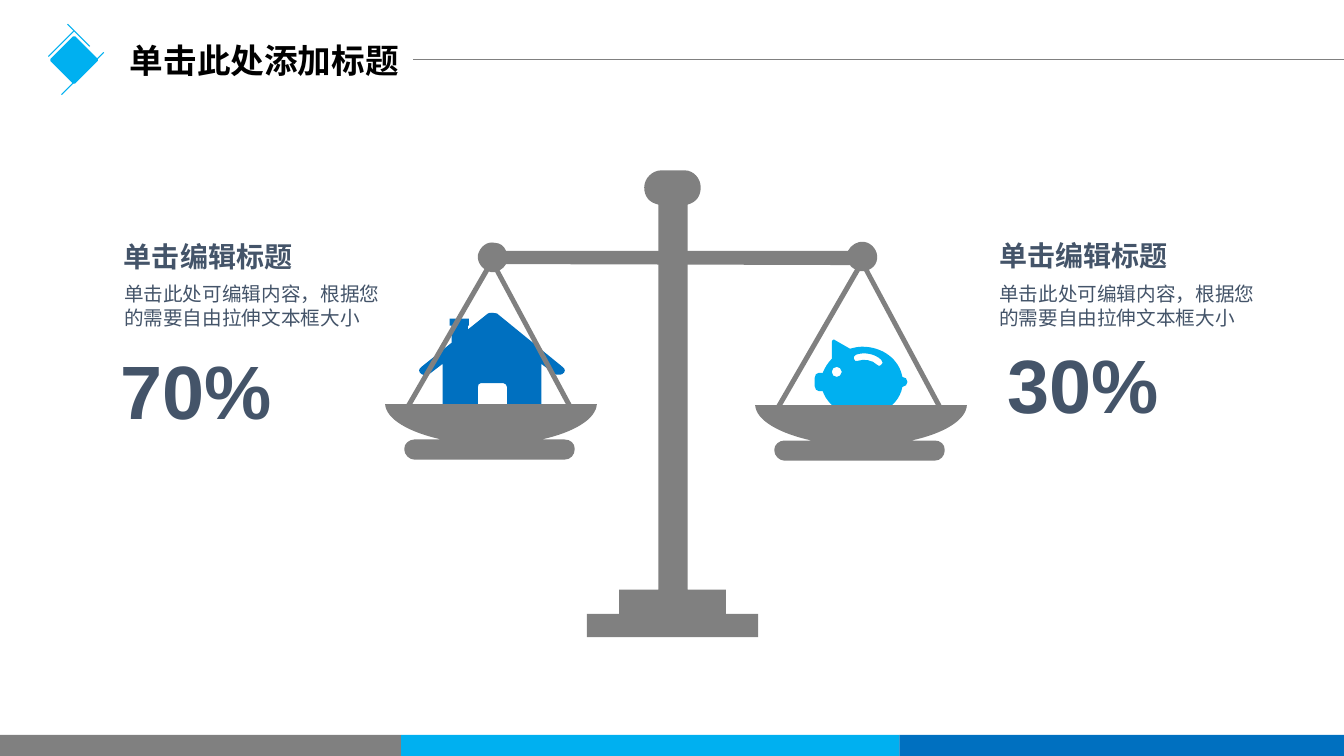
import math
from dataclasses import dataclass

from lxml import etree
from pptx import Presentation
from pptx import util as u
from pptx.dml.color import RGBColor
from pptx.enum import shapes, text
from pptx.oxml.ns import qn


@dataclass(frozen=True)
class Theme:
    gray: str = "808080"
    sky: str = "00B0F0"
    blue: str = "0070C0"
    slate: str = "445469"
    black: str = "000000"
    latin: str = "Arial"
    chinese: str = "Noto Sans CJK SC"
    title: int = 24
    heading: int = 20
    body: int = 14
    figure: int = 54
    hairline: float = 0.75


def turn(point, center, degrees):
    """Turn a point clockwise about a center."""
    angle = math.radians(degrees)
    dx, dy = point[0] - center[0], point[1] - center[1]
    return (center[0] + dx * math.cos(angle) - dy * math.sin(angle),
            center[1] + dx * math.sin(angle) + dy * math.cos(angle))


def curve_segments(shape, contours):
    """Join each run of three line segments that stands for a curve into one."""
    path = next(shape._element.iter(qn("a:path")))
    segments = iter(path.findall(qn("a:lnTo")))
    for contour in contours:
        for node in contour[1:]:
            first = next(segments)
            if len(node) == 6:
                first.tag = qn("a:cubicBezTo")
                for _ in range(2):
                    following = next(segments)
                    first.append(following[0])
                    path.remove(following)


def write(frame, content, *, size, color, font, bold=False):
    paragraph = frame.paragraphs[0]
    run = paragraph.add_run()
    run.text = content
    run.font.size, run.font.bold, run.font.name = u.Pt(size), bold, font
    run.font.color.rgb = RGBColor.from_string(color)
    east_asian = etree.SubElement(run.font._element, qn("a:ea"))
    east_asian.set("typeface", font)


class SlideBuilder:
    def __init__(self, slide, theme):
        self.slide, self.theme = slide, theme

    def paint(self, shape, fill, line_width=0):
        shape.shadow.inherit = False
        shape.fill.solid()
        shape.fill.fore_color.rgb = RGBColor.from_string(fill)
        if line_width:
            shape.line.color.rgb = RGBColor.from_string(fill)
            shape.line.width = u.Pt(line_width)
        else:
            shape.line.fill.background()

    def preset(self, kind, left, top, width, height, fill, line_width=0):
        shape = self.slide.shapes.add_shape(
            kind, *map(u.Inches, (left, top, width, height)))
        self.paint(shape, fill, line_width)

    def outline(self, contours, fill, dx=0, dy=0, rotation=0, center=(0, 0)):
        """Contours hold corners (x, y) and cubic curves (x1, y1, x2, y2, x, y)."""
        builder = None
        for contour in contours:
            pairs = [pair for node in contour for pair in zip(node[::2], node[1::2])]
            turned = [turn(pair, center, -rotation) for pair in pairs]
            points = [(u.Inches(x + dx), u.Inches(y + dy)) for x, y in turned]
            if builder is None:
                builder = self.slide.shapes.build_freeform(*points[0])
            else:
                builder.move_to(*points[0])
            builder.add_line_segments(points[1:], close=True)
        shape = builder.convert_to_shape()
        curve_segments(shape, contours)
        shape.rotation = rotation
        self.paint(shape, fill)

    def line(self, x1, y1, x2, y2, color):
        connector = self.slide.shapes.add_connector(
            shapes.MSO_CONNECTOR.STRAIGHT, *map(u.Inches, (x1, y1, x2, y2)))
        connector.line.color.rgb = RGBColor.from_string(color)
        connector.line.width = u.Pt(self.theme.hairline)
        etree.SubElement(connector._element.spPr, qn("a:effectLst"))

    def textbox(self, content, left, top, width, height, *, inset=0, wrap=True,
                anchor=text.MSO_ANCHOR.TOP, **style):
        box = self.slide.shapes.add_textbox(*map(u.Inches, (left, top, width, height)))
        frame = box.text_frame
        frame.word_wrap = wrap
        frame.vertical_anchor = anchor
        frame.margin_left = frame.margin_right = u.Inches(inset)
        frame.margin_top = frame.margin_bottom = u.Inches(inset / 2)
        write(frame, content, **style)


HOUSE = [
    [(5.58, 3.64), (4.93, 3.11), (4.9, 3.1, 4.86, 3.1, 4.84, 3.11), (4.64, 3.27),
     (4.64, 3.23), (4.65, 3.23), (4.65, 3.16), (4.46, 3.16), (4.46, 3.23), (4.48, 3.23),
     (4.48, 3.4), (4.18, 3.64), (4.15, 3.66, 4.15, 3.69, 4.18, 3.71),
     (4.19, 3.72, 4.24, 3.73, 4.26, 3.71), (4.39, 3.61), (4.39, 4.19), (5.37, 4.19),
     (5.37, 3.61), (5.5, 3.71), (5.52, 3.72, 5.56, 3.72, 5.58, 3.71),
     (5.61, 3.69, 5.61, 3.66, 5.58, 3.64)],
    [(4.74, 4.17), (4.74, 3.84), (4.74, 3.82, 4.75, 3.8, 4.77, 3.8), (4.99, 3.8),
     (5.01, 3.8, 5.03, 3.82, 5.03, 3.84), (5.03, 4.17)],
]
PIGGY_BANK = [
    [(8.95, 3.74), (8.92, 3.57, 8.76, 3.44, 8.55, 3.44), (8.51, 3.44, 8.47, 3.45, 8.43, 3.46),
     (8.29, 3.38), (8.27, 3.36, 8.25, 3.37, 8.25, 3.4), (8.25, 3.56),
     (8.21, 3.6, 8.18, 3.65, 8.16, 3.7), (8.12, 3.7), (8.1, 3.7, 8.08, 3.72, 8.08, 3.75),
     (8.08, 3.83), (8.08, 3.86, 8.1, 3.88, 8.12, 3.88), (8.16, 3.88),
     (8.19, 3.97, 8.26, 4.04, 8.35, 4.09), (8.35, 4.16), (8.35, 4.18, 8.37, 4.2, 8.4, 4.2),
     (8.45, 4.2), (8.47, 4.2, 8.5, 4.18, 8.5, 4.16), (8.5, 4.13), (8.6, 4.13), (8.6, 4.16),
     (8.6, 4.18, 8.62, 4.2, 8.64, 4.2), (8.69, 4.2), (8.72, 4.2, 8.74, 4.18, 8.74, 4.16),
     (8.74, 4.09), (8.85, 4.04, 8.93, 3.95, 8.95, 3.84),
     (8.98, 3.84, 9, 3.81, 9, 3.79), (9, 3.76, 8.98, 3.74, 8.95, 3.74)],
    [(8.3, 3.74), (8.27, 3.74, 8.25, 3.72, 8.25, 3.69), (8.25, 3.66, 8.27, 3.64, 8.3, 3.64),
     (8.32, 3.64, 8.35, 3.66, 8.35, 3.69), (8.35, 3.72, 8.32, 3.74, 8.3, 3.74)],
    [(8.74, 3.62), (8.74, 3.62, 8.73, 3.63, 8.72, 3.63), (8.72, 3.63, 8.71, 3.63, 8.7, 3.62),
     (8.65, 3.57, 8.57, 3.56, 8.51, 3.58), (8.49, 3.59, 8.47, 3.58, 8.47, 3.56),
     (8.46, 3.55, 8.47, 3.53, 8.49, 3.52), (8.57, 3.49, 8.68, 3.51, 8.74, 3.57),
     (8.76, 3.59, 8.76, 3.61, 8.74, 3.62)],
]
MAST = [
    [(7.2, 5.85), (6.82, 5.85), (6.82, 2.03), (6.9, 2.01, 6.95, 1.95, 6.95, 1.86),
     (6.95, 1.77, 6.88, 1.69, 6.79, 1.69), (6.56, 1.69),
     (6.47, 1.69, 6.39, 1.77, 6.39, 1.86), (6.39, 1.95, 6.44, 2.01, 6.53, 2.03),
     (6.53, 5.85), (6.14, 5.85), (6.14, 6.09), (5.82, 6.09), (5.82, 6.32), (7.52, 6.32),
     (7.52, 6.09), (7.2, 6.09)],
]
BEAM = [
    [(8.57, 2.4), (8.51, 2.39, 8.44, 2.43, 8.41, 2.49), (5.02, 2.49),
     (5, 2.44, 4.96, 2.41, 4.91, 2.41), (4.83, 2.39, 4.76, 2.45, 4.74, 2.53),
     (4.73, 2.61, 4.79, 2.68, 4.87, 2.7), (4.93, 2.71, 4.99, 2.67, 5.02, 2.62),
     (8.43, 2.63), (8.45, 2.66, 8.49, 2.68, 8.53, 2.69),
     (8.61, 2.7, 8.69, 2.65, 8.7, 2.57), (8.71, 2.49, 8.65, 2.41, 8.57, 2.4)],
]
PAN = [
    [(5.92, 4.01), (3.82, 4.01), (3.83, 4.16, 4.06, 4.29, 4.38, 4.36), (4.11, 4.36),
     (4.06, 4.36, 4.01, 4.4, 4.01, 4.45), (4.01, 4.46), (4.01, 4.51, 4.06, 4.56, 4.11, 4.56),
     (5.6, 4.56), (5.66, 4.56, 5.7, 4.51, 5.7, 4.46), (5.7, 4.45),
     (5.7, 4.4, 5.66, 4.36, 5.6, 4.36), (5.37, 4.36), (5.69, 4.29, 5.91, 4.16, 5.92, 4.01)],
]
STRINGS = [[(4.06, 4.06), (4.02, 4.03), (4.88, 2.54), (5.68, 4.03), (5.64, 4.06), (4.88, 2.64)]]


def main():
    presentation = Presentation()
    presentation.slide_width, presentation.slide_height = u.Inches(13.33), u.Inches(7.5)
    slide = presentation.slides.add_slide(presentation.slide_layouts[6])
    theme = Theme()
    builder = SlideBuilder(slide, theme)
    preset = shapes.MSO_SHAPE

    # Title and its rule
    builder.textbox("单击此处添加标题", 1.19, 0.35, 2.91, 0.5, inset=0.1,
                    anchor=text.MSO_ANCHOR.MIDDLE, size=theme.title, color=theme.black,
                    font=theme.chinese, bold=True)
    builder.line(4.1, 0.59, 13.33, 0.59, theme.gray)

    # Footer bands
    edges = (0, 3.98, 8.92, 13.33)
    for left, right, color in zip(edges, edges[1:], (theme.gray, theme.sky, theme.blue)):
        builder.preset(preset.RECTANGLE, left, 7.29, right - left, 0.21, color)

    # Diamond ornament
    builder.preset(preset.DIAMOND, 0.51, 0.37, 0.45, 0.45, theme.sky, line_width=2)
    for ends in ((0.67, 0.24, 0.89, 0.46), (0.73, 0.31, 0.48, 0.56), (0.61, 0.94, 1.03, 0.52)):
        builder.line(*ends, theme.sky)

    # Balance and the things weighed
    builder.outline(HOUSE, theme.blue)
    builder.outline(PIGGY_BANK, theme.sky)
    builder.outline(MAST, theme.gray)
    for dx, dy in ((0, 0), (3.67, 0.01)):
        builder.outline(PAN, theme.gray, dx, dy)
        builder.outline(STRINGS, theme.gray, dx, dy)
    builder.outline(BEAM, theme.gray, rotation=8.9, center=(6.72, 2.55))

    # Text on both sides
    style = dict(color=theme.slate, font=theme.latin)
    for left, heading_top, figure, figure_left, figure_top in (
            (1.23, 2.38, "70%", 1.1, 3.36), (9.91, 2.37, "30%", 9.89, 3.3)):
        builder.textbox(figure, figure_left, figure_top, 1.72, 1.01, inset=0.1, wrap=False,
                        size=theme.figure, bold=True, **style)
        builder.textbox("单击编辑标题", left, heading_top, 2.14, 0.34,
                        size=theme.heading, bold=True, **style)
        builder.textbox("单击此处可编辑内容，根据您的需要自由拉伸文本框大小",
                        left, 2.8, 2.55, 0.47, size=theme.body, **style)

    presentation.save("out.pptx")


if __name__ == "__main__":
    main()
